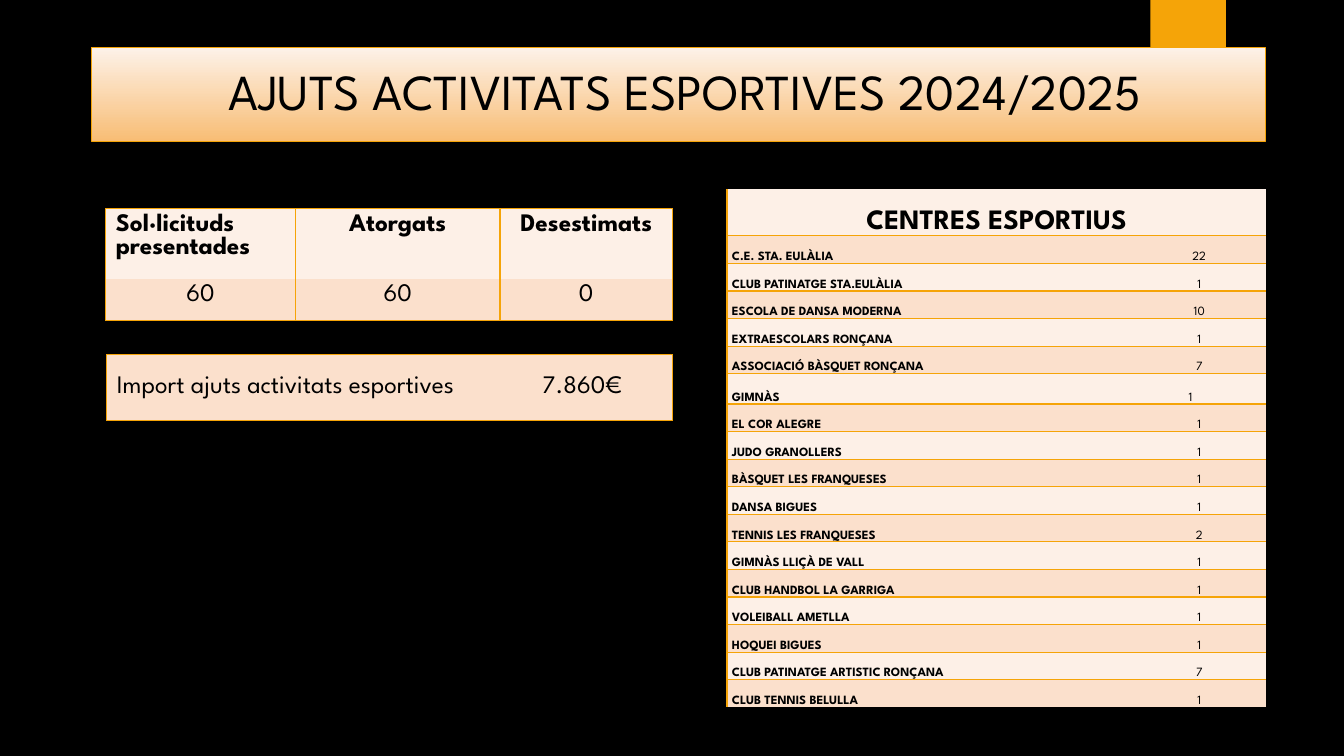
from lxml import etree
from pptx import Presentation
from pptx.dml.color import RGBColor
from pptx.enum.shapes import MSO_SHAPE as Shape
from pptx.enum.text import MSO_ANCHOR as Anchor, PP_ALIGN as Align
from pptx.oxml.ns import qn
from pptx.util import Inches, Pt

# Content
TITLE = "AJUTS ACTIVITATS ESPORTIVES 2024/2025"
TOTALS = [("Sol·licituds presentades", "Atorgats", "Desestimats"),
          ("60", "60", "0")]
AMOUNT = [("Import ajuts activitats esportives", "7.860€")]
CENTRES = [
    ("CENTRES ESPORTIUS", ""),
    ("C.E. STA. EULÀLIA", "22"),
    ("CLUB PATINATGE STA.EULÀLIA", "1"),
    ("ESCOLA DE DANSA MODERNA", "10"),
    ("EXTRAESCOLARS RONÇANA", "1"),
    ("ASSOCIACIÓ BÀSQUET RONÇANA", "7"),
    ("GIMNÀS", "1"),
    ("EL COR ALEGRE", "1"),
    ("JUDO GRANOLLERS", "1"),
    ("BÀSQUET LES FRANQUESES", "1"),
    ("DANSA BIGUES", "1"),
    ("TENNIS LES FRANQUESES", "2"),
    ("GIMNÀS LLIÇÀ DE VALL", "1"),
    ("CLUB HANDBOL LA GARRIGA", "1"),
    ("VOLEIBALL AMETLLA", "1"),
    ("HOQUEI BIGUES", "1"),
    ("CLUB PATINATGE ARTISTIC RONÇANA", "7"),
    ("CLUB TENNIS BELULLA", "1"),
]
GYM = 6  # taller row with its count set off from the left

FONT = "League Spartan"
BLACK = RGBColor(0x00, 0x00, 0x00)
ORANGE = RGBColor(0xF5, 0xA4, 0x08)
CREAM = RGBColor(0xFD, 0xF0, 0xE7)
PEACH = RGBColor(0xFB, 0xE0, 0xCC)
PALE = RGBColor(0xFD, 0xF2, 0xE9)
AMBER = RGBColor(0xF8, 0xBD, 0x75)


def style(para, size, bold=False, align=Align.CENTER):
    para.alignment = align
    for run in para.runs:
        font = run.font
        font.name, font.size, font.bold = FONT, Pt(size), bold
        font.color.rgb = BLACK


def add_box(slide, left, top, width, height):
    box = slide.shapes.add_shape(
        Shape.RECTANGLE, *map(Inches, (left, top, width, height)))
    box.shadow.inherit = False
    return box


def set_edges(cell, drawn):
    """Draw the sides named in drawn, clear the others."""
    props = cell._tc.get_or_add_tcPr()
    for side in "LRTB":
        line = etree.SubElement(props, qn("a:ln" + side), w=str(Pt(1)))
        if side in drawn:
            fill = etree.SubElement(line, qn("a:solidFill"))
            etree.SubElement(fill, qn("a:srgbClr"), val=str(ORANGE))
        else:
            etree.SubElement(line, qn("a:noFill"))


def add_grid(slide, data, left, top, cols, rows, lines, odd):
    """Lines: L R T B are outer edges, V and H inner ones."""
    last_row, last_col = len(rows) - 1, len(cols) - 1
    table = slide.shapes.add_table(
        len(rows), len(cols), Inches(left), Inches(top),
        Inches(sum(cols)), Inches(sum(rows))).table
    table.first_row = table.horz_banding = False
    for col, width in zip(table.columns, cols):
        col.width = Inches(width)
    for r, high in enumerate(rows):
        table.rows[r].height = Inches(high)
        for c, text in enumerate(data[r]):
            cell = table.cell(r, c)
            rule = {"L": "V" if c else "L", "R": "V" if c < last_col else "R",
                    "T": "H" if r else "T", "B": "H" if r < last_row else "B"}
            set_edges(cell, [s for s in rule if rule[s] in lines])
            cell.fill.solid()
            cell.fill.fore_color.rgb = PEACH if r % 2 == odd else CREAM
            cell.text_frame.text = text
    return table


# Slide
deck = Presentation()
deck.slide_width, deck.slide_height = Inches(13.33), Inches(7.5)
slide = deck.slides.add_slide(deck.slide_layouts[6])
slide.background.fill.solid()
slide.background.fill.fore_color.rgb = BLACK

# Orange tab and title band
tab = add_box(slide, 11.41, 0, 0.75, 1.25)
tab.fill.solid()
tab.fill.fore_color.rgb = ORANGE
tab.line.fill.background()

band = add_box(slide, 0.91, 0.47, 11.64, 0.93)
band.fill.gradient()
band.fill.gradient_angle = 270
for stop, color, place in zip(band.fill.gradient_stops, (PALE, AMBER), (0, 1)):
    stop.color.rgb = color
    stop.position = place
band.line.color.rgb = ORANGE
band.line.width = Pt(0.75)
frame = band.text_frame
frame.word_wrap = True
frame.vertical_anchor = Anchor.MIDDLE
frame.margin_left = Inches(0.23)
frame.text = TITLE
frame.paragraphs[0].line_spacing = 0.9
style(frame.paragraphs[0], 36)

# Amount granted
table = add_grid(slide, AMOUNT, 1.06, 3.52, (3.82, 1.79), (0.65,), "LRTB", 0)
for c in range(2):
    cell = table.cell(0, c)
    cell.vertical_anchor = Anchor.MIDDLE
    style(cell.text_frame.paragraphs[0], 18,
          align=Align.CENTER if c else Align.LEFT)

# Sports centres
plain = (5.14 - 0.46 - 0.3) / 16
rows = [0.46] + [0.3 if r == GYM else plain for r in range(1, len(CENTRES))]
table = add_grid(slide, CENTRES, 7.21, 1.88, (4.02, 1.33), rows, "LH", 1)
table.cell(0, 0).merge(table.cell(0, 1))
for r in range(len(rows)):
    for c in range(2):
        cell = table.cell(r, c)
        cell.vertical_anchor = Anchor.BOTTOM
        cell.margin_left = cell.margin_right = Inches(0.05)
        cell.margin_top = cell.margin_bottom = 0
        para = cell.text_frame.paragraphs[0]
        para.line_spacing, para.space_after = 1.07, Pt(8)
        if r == 0:
            style(para, 20, True)
        elif c == 0:
            style(para, 9, True, Align.LEFT if r == GYM else Align.JUSTIFY)
        else:
            style(para, 9, align=Align.LEFT if r == GYM else Align.CENTER)
table.cell(GYM, 1).margin_left = Inches(0.56)

# Requests
table = add_grid(slide, TOTALS, 1.05, 2.07, (1.88, 2.03, 1.71),
                 (0.7, 0.41), "LRTBV", 1)
for r in range(2):
    for c in range(3):
        style(table.cell(r, c).text_frame.paragraphs[0], 18, r == 0,
              Align.CENTER if r or c else Align.LEFT)

deck.save("out.pptx")
